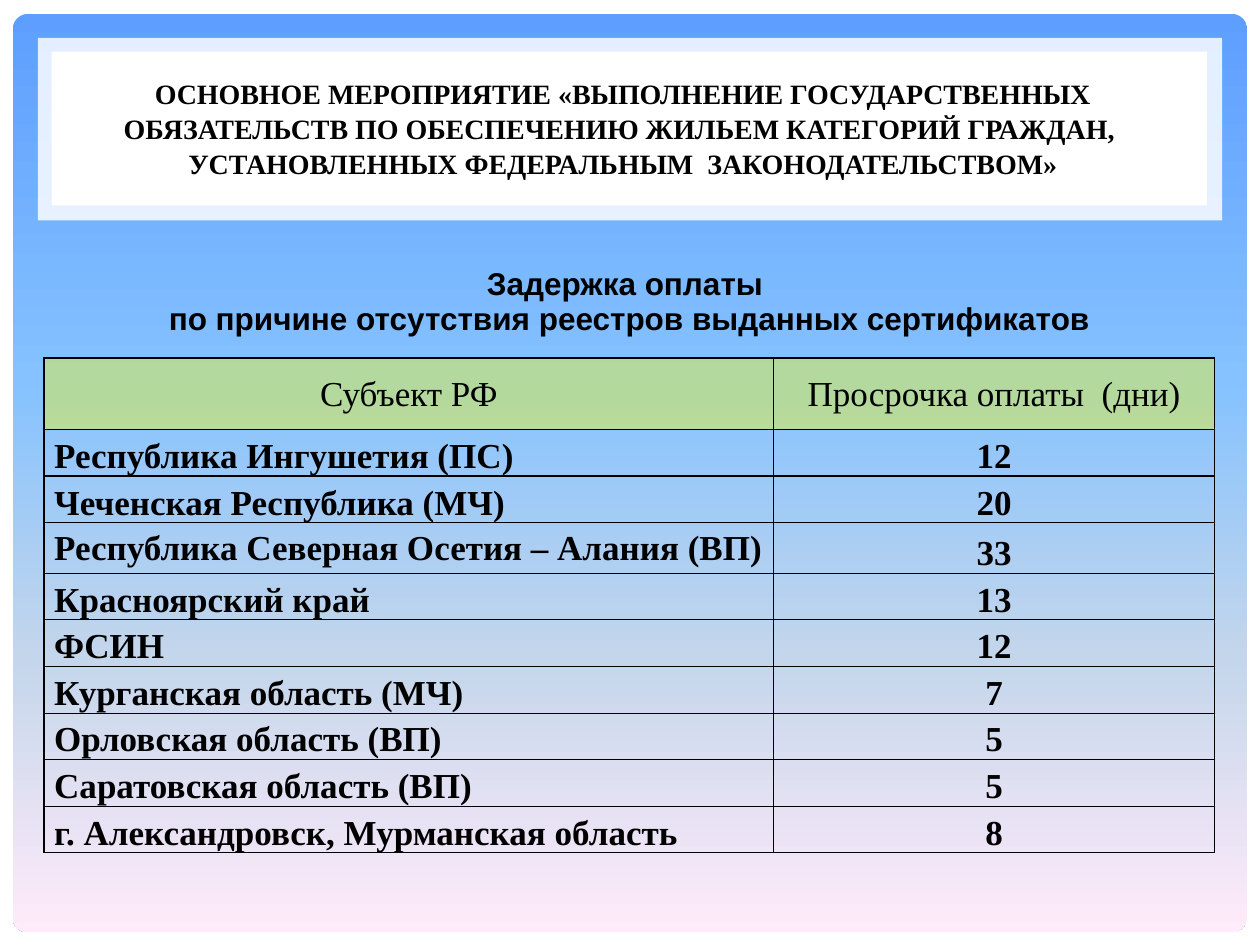
from lxml import etree
from pptx import Presentation
from pptx.dml.color import RGBColor
from pptx.enum.shapes import MSO_SHAPE
from pptx.enum.text import MSO_ANCHOR, PP_ALIGN
from pptx.oxml.ns import qn
from pptx.util import Inches, Pt

RECT, ROUND = MSO_SHAPE.RECTANGLE, MSO_SHAPE.ROUNDED_RECTANGLE
LEFT, CENTER = PP_ALIGN.LEFT, PP_ALIGN.CENTER
MIDDLE, BOTTOM = MSO_ANCHOR.MIDDLE, MSO_ANCHOR.BOTTOM
SERIF, SANS = "Times New Roman", "Arial"
BLACK, WHITE, YELLOW = "000000", "FFFFFF", "FFFF00"
PLAIN_STYLE = "{2D5ABB26-0587-4C30-8999-92F81FD0307C}"
SKY = [(0, "5E9EFF"), (40, "85C2FF"), (70, "C4D6EB"), (100, "FFEBFA")]

TITLE = ("ОСНОВНОЕ МЕРОПРИЯТИЕ «ВЫПОЛНЕНИЕ ГОСУДАРСТВЕННЫХ ОБЯЗАТЕЛЬСТВ "
         "ПО ОБЕСПЕЧЕНИЮ ЖИЛЬЕМ КАТЕГОРИЙ ГРАЖДАН,  УСТАНОВЛЕННЫХ "
         "ФЕДЕРАЛЬНЫМ  ЗАКОНОДАТЕЛЬСТВОМ»")
CAPTION = ["Задержка оплаты ", "по причине отсутствия реестров выданных сертификатов"]
HEADER = ["Субъект РФ", "Просрочка оплаты  (дни)"]
DELAYS = [
    ("Республика Ингушетия (ПС)", 12),
    ("Чеченская Республика (МЧ)", 20),
    ("Республика Северная Осетия – Алания (ВП)", 33),
    ("Красноярский край", 13),
    ("ФСИН", 12),
    ("Курганская область (МЧ)", 7),
    ("Орловская область (ВП)", 5),
    ("Саратовская область (ВП)", 5),
    ("г. Александровск, Мурманская область", 8),
]
COL_WIDTHS = [5.79, 3.5]
ROW_HEIGHTS = [0.9, 0.57, 0.37, 0.37, 0.4] + [0.37] * 6


def rgb(value):
    return RGBColor.from_string(value)


def solid(fill, color, alpha=None):
    """Fill with one colour; alpha is the opacity in percent."""
    fill.solid()
    fill.fore_color.rgb = rgb(color)
    if alpha is not None:
        clr = fill._xPr.find(".//" + qn("a:srgbClr"))
        etree.SubElement(clr, qn("a:alpha"), val=str(alpha * 1000))


def sky_gradient(sp):
    sp.fill.gradient()
    sp.fill.gradient_angle = 270
    stops = sp.element.spPr.find(".//" + qn("a:gsLst"))
    for gs in list(stops):
        stops.remove(gs)
    for pos, color in SKY:
        gs = etree.SubElement(stops, qn("a:gs"), pos=str(pos * 1000))
        etree.SubElement(gs, qn("a:srgbClr"), val=color)


def add_panel(slide, kind, box):
    sp = slide.shapes.add_shape(kind, *map(Inches, box))
    sp.shadow.inherit = False
    sp.line.fill.background()
    return sp


def write(tf, lines, align, size, font, bold):
    tf.text = "\n".join(lines)
    for p in tf.paragraphs:
        p.alignment = align
        for name, value in {"size": Pt(size), "name": font, "bold": bold}.items():
            setattr(p.runs[0].font, name, value)
        p.runs[0].font.color.rgb = rgb(BLACK)


def set_borders(cell, widths):
    """Draw black borders; widths maps L, R, T, B to points."""
    tc_pr = cell._tc.get_or_add_tcPr()
    for i, (side, width) in enumerate(widths.items()):
        ln = etree.Element(qn("a:ln" + side), w=str(Pt(width)))
        fill = etree.SubElement(ln, qn("a:solidFill"))
        etree.SubElement(fill, qn("a:srgbClr"), val=BLACK)
        tc_pr.insert(i, ln)


def format_cell(cell, anchor, indent=0.01):
    margins = {"margin_left": indent, "margin_top": 0.01,
               "margin_right": 0.01, "margin_bottom": 0}
    for name, value in margins.items():
        setattr(cell, name, Inches(value))
    cell.vertical_anchor = anchor
    cell.fill.background()


def add_frame(slide, box):
    x, y, w, h = box
    sp = add_panel(slide, ROUND, box)
    sp.adjustments[0] = 0.017
    sky_gradient(sp)
    solid(add_panel(slide, RECT, (x + 0.2, y + 0.19, w - 0.4, 1.45)).fill, WHITE, 83)
    solid(add_panel(slide, RECT, (x + 0.31, y + 0.3, w - 0.63, 1.22)).fill, WHITE)


def place_title(slide, box):
    title = slide.shapes.title
    title.left, title.top, title.width, title.height = map(Inches, box)
    tf = title.text_frame
    tf.word_wrap = True
    tf.vertical_anchor = MIDDLE
    write(tf, [TITLE], CENTER, 16, SERIF, True)
    tf.paragraphs[0].line_spacing = 1.05
    # The title lies above the panels
    title.element.getparent().append(title.element)


def add_delay_table(slide, box):
    frame = slide.shapes.add_table(len(ROW_HEIGHTS), len(COL_WIDTHS), *map(Inches, box))
    table = frame.table
    table._tbl.tblPr.find(qn("a:tableStyleId")).text = PLAIN_STYLE
    for col, width in zip(table.columns, COL_WIDTHS):
        col.width = Inches(width)
    for row, height in zip(table.rows, ROW_HEIGHTS):
        row.height = Inches(height)

    caption = table.cell(0, 0)
    caption.merge(table.cell(0, 1))
    format_cell(caption, MIDDLE)
    write(caption.text_frame, CAPTION, CENTER, 18, SANS, True)
    for c in range(2):
        set_borders(table.cell(0, c), {"B": 1})

    for c, text in enumerate(HEADER):
        cell = table.cell(1, c)
        format_cell(cell, MIDDLE)
        solid(cell.fill, YELLOW, 38)
        write(cell.text_frame, [text], CENTER, 20, SERIF, False)
        set_borders(cell, dict.fromkeys("LRTB", 1))

    last = len(DELAYS) + 1
    for r, (region, days) in enumerate(DELAYS, start=2):
        for c, (text, align, indent) in enumerate(
                [(region, LEFT, 0.08), (str(days), CENTER, 0.01)]):
            cell = table.cell(r, c)
            # The tall row centres its long region name
            format_cell(cell, MIDDLE if (r, c) == (4, 0) else BOTTOM, indent)
            write(cell.text_frame, [text], align, 20, SERIF, True)
            set_borders(cell, {"L": 1, "R": 1, "T": 1 if r <= 3 else 0.5,
                               "B": 1 if r in (2, last) else 0.5})


def main():
    prs = Presentation()
    prs.slide_width, prs.slide_height = Inches(10), Inches(7.5)
    slide = prs.slides.add_slide(prs.slide_layouts[5])
    solid(slide.background.fill, WHITE)
    add_frame(slide, (0.1, 0.11, 9.8, 7.29))
    add_delay_table(slide, (0.35, 1.94, 9.29, 4.8))
    place_title(slide, (0.43, 0.44, 9.03, 1.14))
    prs.save("out.pptx")


if __name__ == "__main__":
    main()
